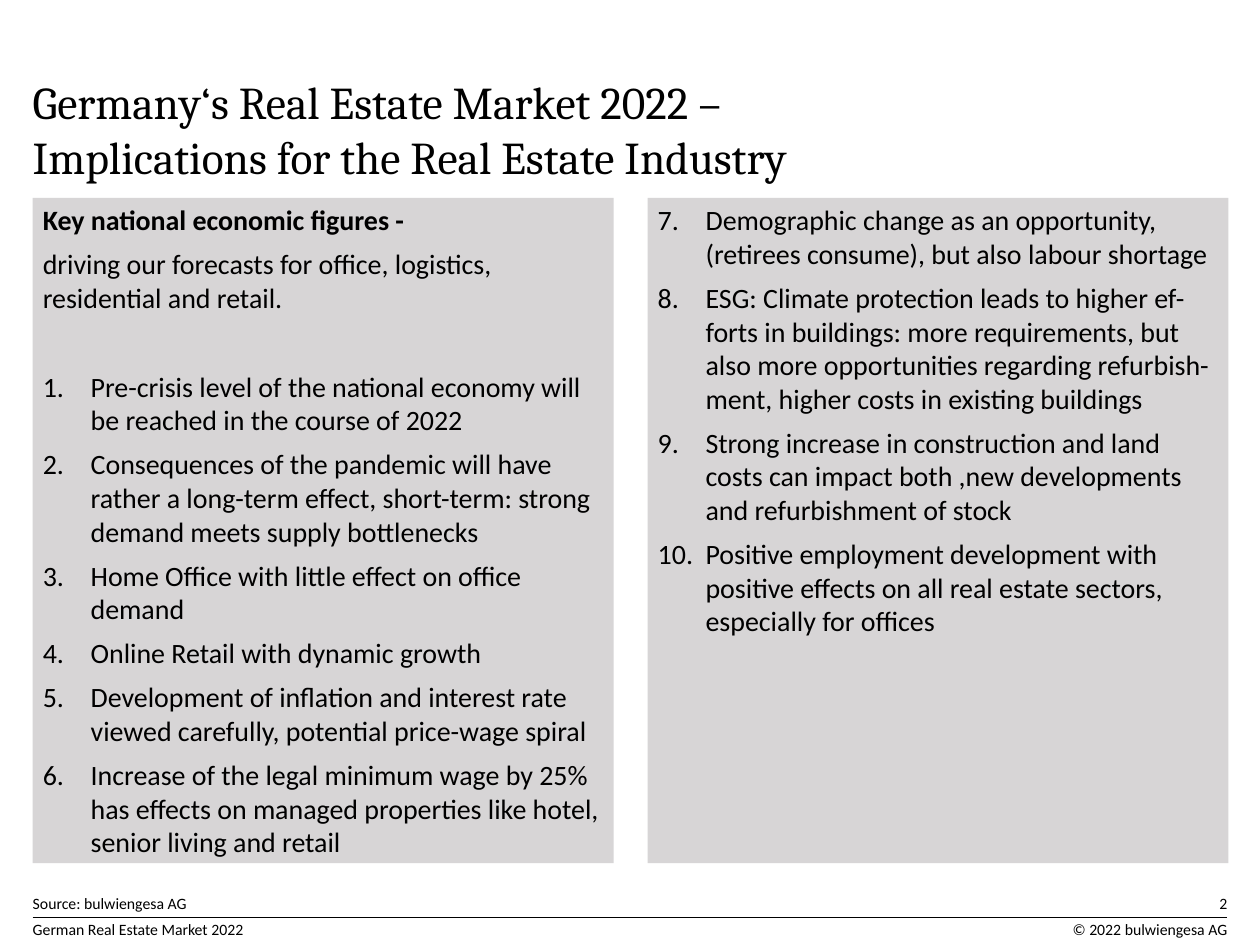
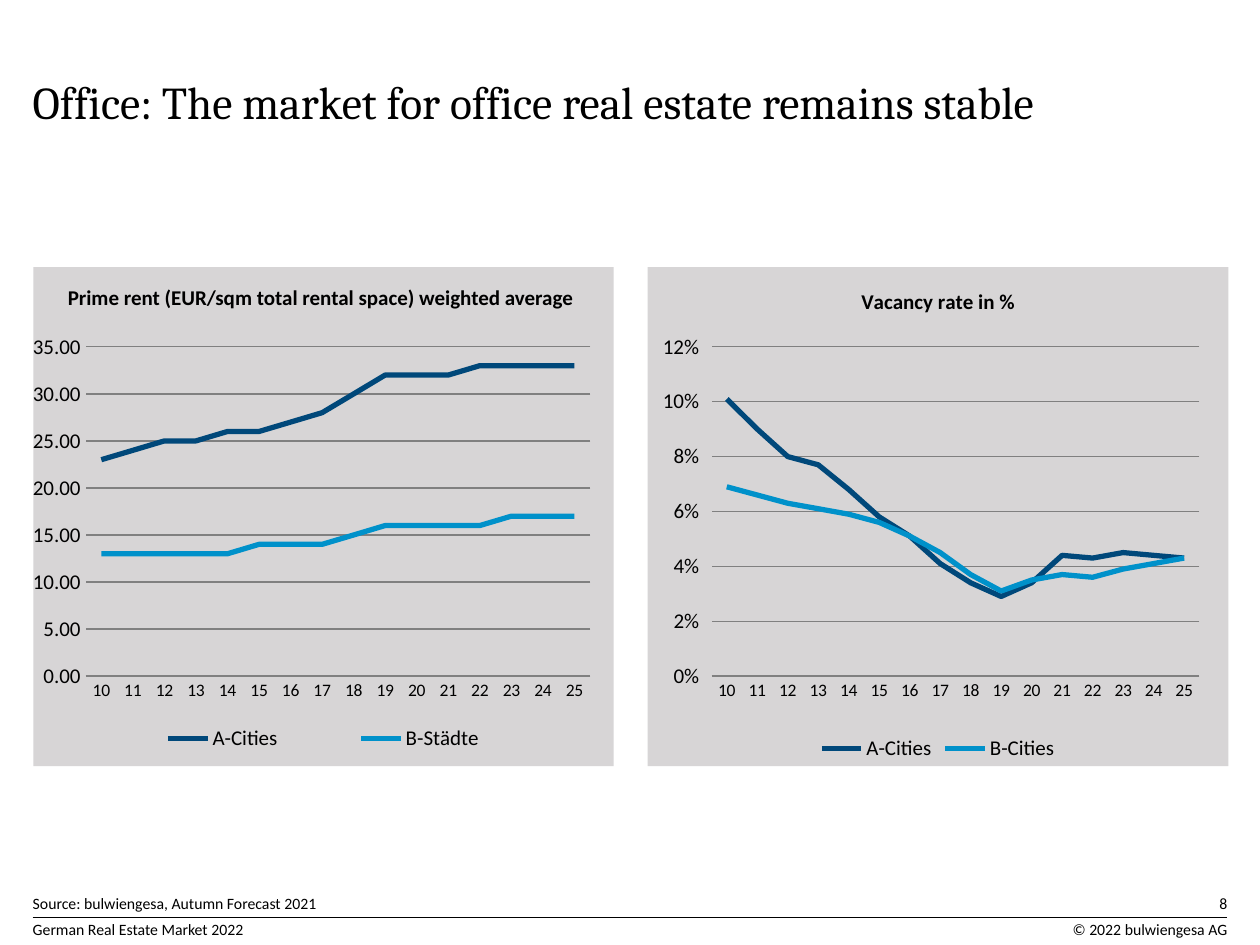
import pptx
import pptx.chart.data
import pptx.dml.color
import pptx.enum.chart
import pptx.enum.shapes
import pptx.enum.text
import pptx.oxml
import pptx.oxml.ns
import pptx.util
from lxml import etree

Inches, Pt = pptx.util.Inches, pptx.util.Pt
qn = pptx.oxml.ns.qn
ALIGN = pptx.enum.text.PP_ALIGN

COLORS = {"text": "000000", "panel": "D7D5D6", "grid": "808080",
          "a_cities": "00487A", "b_cities": "0091CA"}
COLUMNS = (0.26, 5.14)
COLUMN_WIDTH = 4.61
RIGHT = 9.74

YEARS = [str(year) for year in range(10, 26)]
RENT_A = [23, 24, 25, 25, 26, 26, 27, 28, 30, 32, 32, 32, 33, 33, 33, 33]
RENT_B = [13, 13, 13, 13, 13, 14, 14, 14, 15, 16, 16, 16, 16, 17, 17, 17]
VACANCY_A = [0.101, 0.09, 0.08, 0.077, 0.068, 0.058, 0.051, 0.041,
             0.034, 0.029, 0.034, 0.044, 0.043, 0.045, 0.044, 0.043]
VACANCY_B = [0.069, 0.066, 0.063, 0.061, 0.059, 0.056, 0.051, 0.045,
             0.037, 0.031, 0.035, 0.037, 0.036, 0.039, 0.041, 0.043]

NATIONAL_FIGURES = [
    "Pre-crisis level of the national economy will be reached in the course of 2022",
    "Consequences of the pandemic will have rather a long-term effect, "
    "short-term: strong demand meets supply bottlenecks",
    "Home Office with little effect on office demand",
    "Online Retail with dynamic growth",
    "Development of inflation and interest rate viewed carefully, "
    "potential price-wage spiral",
    "Increase of the legal minimum wage by 25% has effects on managed "
    "properties like hotel, senior living and retail",
]
INDUSTRY_FIGURES = [
    "Demographic change as an opportunity, (retirees consume), but also labour shortage",
    "ESG: Climate protection leads to higher ef-forts in buildings: more "
    "requirements, but also more opportunities regarding refurbish-ment, "
    "higher costs in existing buildings",
    "Strong increase in construction and land costs can impact both ,new "
    "developments and refurbishment of stock",
    "Positive employment development with positive effects on all real "
    "estate sectors, especially for offices",
]


def rgb(name):
    return pptx.dml.color.RGBColor.from_string(COLORS[name])


def set_font(font, size, bold=False, name="Calibri"):
    font.size, font.bold, font.name = Pt(size), bold, name
    font.color.rgb = rgb("text")


def write(tf, text, size=16, bold=False, font="Calibri", align=ALIGN.LEFT,
          before=0, start=None):
    """Append a paragraph; start numbers it in a list that begins there."""
    p = tf.paragraphs[0]
    if p.runs:
        p = tf.add_paragraph()
    if start:
        pPr = p._p.get_or_add_pPr()
        pPr.set("marL", str(Inches(0.38)))
        pPr.set("indent", str(-Inches(0.38)))
        number = etree.SubElement(pPr, qn("a:buAutoNum"), type="arabicPeriod")
        number.set("startAt", str(start))
    p.alignment, p.space_before = align, Pt(before)
    for i, line in enumerate(text.split("\n")):
        if i:
            p.add_line_break()
        r = p.add_run()
        r.text = line
        set_font(r.font, size, bold, font)


def place(parent, index, box, inner=False):
    """Give a chart part a fixed box, in fractions of the chart."""
    for old in parent.findall(qn("c:layout")):
        parent.remove(old)
    layout = etree.Element(qn("c:layout"))
    manual = etree.SubElement(layout, qn("c:manualLayout"))
    if inner:
        etree.SubElement(manual, qn("c:layoutTarget"), val="inner")
    for key in "xy":
        etree.SubElement(manual, qn(f"c:{key}Mode"), val="edge")
    for key, value in zip("xywh", box):
        etree.SubElement(manual, qn(f"c:{key}"), val=str(value))
    parent.insert(index, layout)


class Deck:
    def __init__(self):
        self.prs = pptx.Presentation()
        self.prs.slide_width, self.prs.slide_height = Inches(10), Inches(7.5)

    def slide(self, title, source, number):
        self.s = self.prs.slides.add_slide(self.prs.slide_layouts[5])
        sp = self.s.shapes.title
        lines = title.count("\n") + 1
        sp.left, sp.top = Inches(COLUMNS[0]), Inches(0.59)
        sp.width, sp.height = Inches(9.49), Inches(0.44 * lines)
        self.frame(sp.text_frame)
        write(sp.text_frame, title, size=26, font="Cambria")
        self.rule(7.28)
        self.text(source, 0.26, 7.09, 7.48, 0.15, size=9)
        self.text(number, 9.15, 7.09, 0.59, 0.15, size=9, align=ALIGN.RIGHT)
        self.text("German Real Estate Market 2022", 0.26, 7.3, 6.69, 0.15, size=9)
        self.text("© 2022 bulwiengesa AG", 7.19, 7.3, 2.55, 0.15, size=9,
                  align=ALIGN.RIGHT)

    def frame(self, tf, insets=(0, 0, 0, 0)):
        tf.word_wrap = True
        tf.auto_size = pptx.enum.text.MSO_AUTO_SIZE.NONE
        tf.vertical_anchor = pptx.enum.text.MSO_ANCHOR.TOP
        (tf.margin_left, tf.margin_top,
         tf.margin_right, tf.margin_bottom) = map(Inches, insets)

    def text(self, text, x, y, w, h, **style):
        sp = self.s.shapes.add_textbox(Inches(x), Inches(y), Inches(w), Inches(h))
        self.frame(sp.text_frame)
        write(sp.text_frame, text, **style)

    def rule(self, y):
        line = self.s.shapes.add_connector(
            pptx.enum.shapes.MSO_CONNECTOR.STRAIGHT,
            Inches(COLUMNS[0]), Inches(y), Inches(RIGHT), Inches(y))
        line.line.color.rgb, line.line.width = rgb("text"), Pt(0.4)
        etree.SubElement(line._element.spPr, qn("a:effectLst"))

    def panel(self, column):
        sp = self.s.shapes.add_shape(
            pptx.enum.shapes.MSO_SHAPE.RECTANGLE, Inches(COLUMNS[column]),
            Inches(1.57), Inches(COLUMN_WIDTH), Inches(5.28))
        sp.shadow.inherit = False
        sp.fill.solid()
        sp.fill.fore_color.rgb = rgb("panel")
        sp.line.fill.background()
        self.frame(sp.text_frame, (0.08, 0.04, 0.04, 0.04))
        return sp.text_frame

    def numbered(self, tf, items, start=1, first_gap=0):
        for i, item in enumerate(items):
            write(tf, item, before=6 if i else first_gap, start=start)

    def line_chart(self, column, series, number_format, top, step, plot_box,
                   title=None, legend_box=None):
        data = pptx.chart.data.CategoryChartData(number_format=number_format)
        data.categories = YEARS
        for name, values in series.items():
            data.add_series(name, values)
        chart = self.s.shapes.add_chart(
            pptx.enum.chart.XL_CHART_TYPE.LINE, Inches(COLUMNS[column]),
            Inches(2.12), Inches(COLUMN_WIDTH), Inches(3.96), data).chart
        set_font(chart.font, 12)
        self.chart_fill(chart)
        chart.has_title = bool(title)
        if title:
            write(chart.chart_title.text_frame, title, size=12, bold=True,
                  align=ALIGN.CENTER)
            chart.chart_title.include_in_layout = False

        chart.plots[0].vary_by_categories = False
        for ser, color in zip(chart.plots[0].series, ("a_cities", "b_cities")):
            ser.smooth = False
            ser.marker.style = pptx.enum.chart.XL_MARKER_STYLE.NONE
            ser.format.line.color.rgb = rgb(color)
            ser.format.line.width = Pt(3)

        ticks = pptx.enum.chart.XL_TICK_MARK
        years, scale = chart.category_axis, chart.value_axis
        years.major_tick_mark = ticks.NONE
        scale.major_tick_mark = ticks.OUTSIDE if title else ticks.NONE
        scale.minimum_scale, scale.maximum_scale = 0, top
        scale.major_unit = step
        scale.tick_labels.number_format = number_format
        scale.tick_labels.number_format_is_linked = False
        set_font(years.tick_labels.font, 10)
        set_font(scale.tick_labels.font, 12)
        scale.format.line.fill.background()
        for line in (years.format.line, scale.major_gridlines.format.line):
            line.color.rgb, line.width = rgb("grid"), Pt(0.75)

        chart.has_legend = True
        legend = chart.legend
        legend.position = pptx.enum.chart.XL_LEGEND_POSITION.BOTTOM
        legend.include_in_layout = False
        set_font(legend.font, 12)
        root = chart.element.find(qn("c:chart"))
        place(root.find(qn("c:plotArea")), 0, plot_box, inner=True)
        if legend_box:
            place(root.find(qn("c:legend")), 1, legend_box)

    def chart_fill(self, chart):
        spPr = etree.Element(qn("c:spPr"))
        fill = etree.SubElement(spPr, qn("a:solidFill"))
        etree.SubElement(fill, qn("a:srgbClr"), val=COLORS["panel"])
        line = etree.SubElement(spPr, qn("a:ln"))
        etree.SubElement(line, qn("a:noFill"))
        chart.element.find(qn("c:chart")).addnext(spPr)


def implications(deck):
    deck.slide("Germany‘s Real Estate Market 2022 –\n"
               "Implications for the Real Estate Industry",
               "Source: bulwiengesa AG", "2")
    tf = deck.panel(0)
    write(tf, "Key national economic figures -", bold=True)
    write(tf, "driving our forecasts for office, logistics, residential and retail.",
          before=6)
    deck.numbered(tf, NATIONAL_FIGURES, first_gap=31.5)
    deck.numbered(deck.panel(1), INDUSTRY_FIGURES, start=7)


def office_market(deck):
    deck.slide("Office: The market for office real estate remains stable",
               "Source: bulwiengesa, Autumn Forecast 2021", "8")
    deck.line_chart(0, {"A-Cities": RENT_A, "B-Städte": RENT_B}, "0.00", 35, 5,
                    (0.09, 0.16, 0.87, 0.66), legend_box=(0.1, 0.91, 0.8, 0.07))
    deck.text("Prime rent (EUR/sqm total rental space) weighted average",
              0.24, 2.26, COLUMN_WIDTH, 0.3, size=12, bold=True, align=ALIGN.CENTER)
    deck.line_chart(1, {"A-Cities": VACANCY_A, "B-Cities": VACANCY_B}, "0%",
                    0.12, 0.02, (0.11, 0.16, 0.84, 0.66), title="Vacancy rate in %")


def main():
    deck = Deck()
    implications(deck)
    office_market(deck)
    deck.prs.save("out.pptx")


if __name__ == "__main__":
    main()
